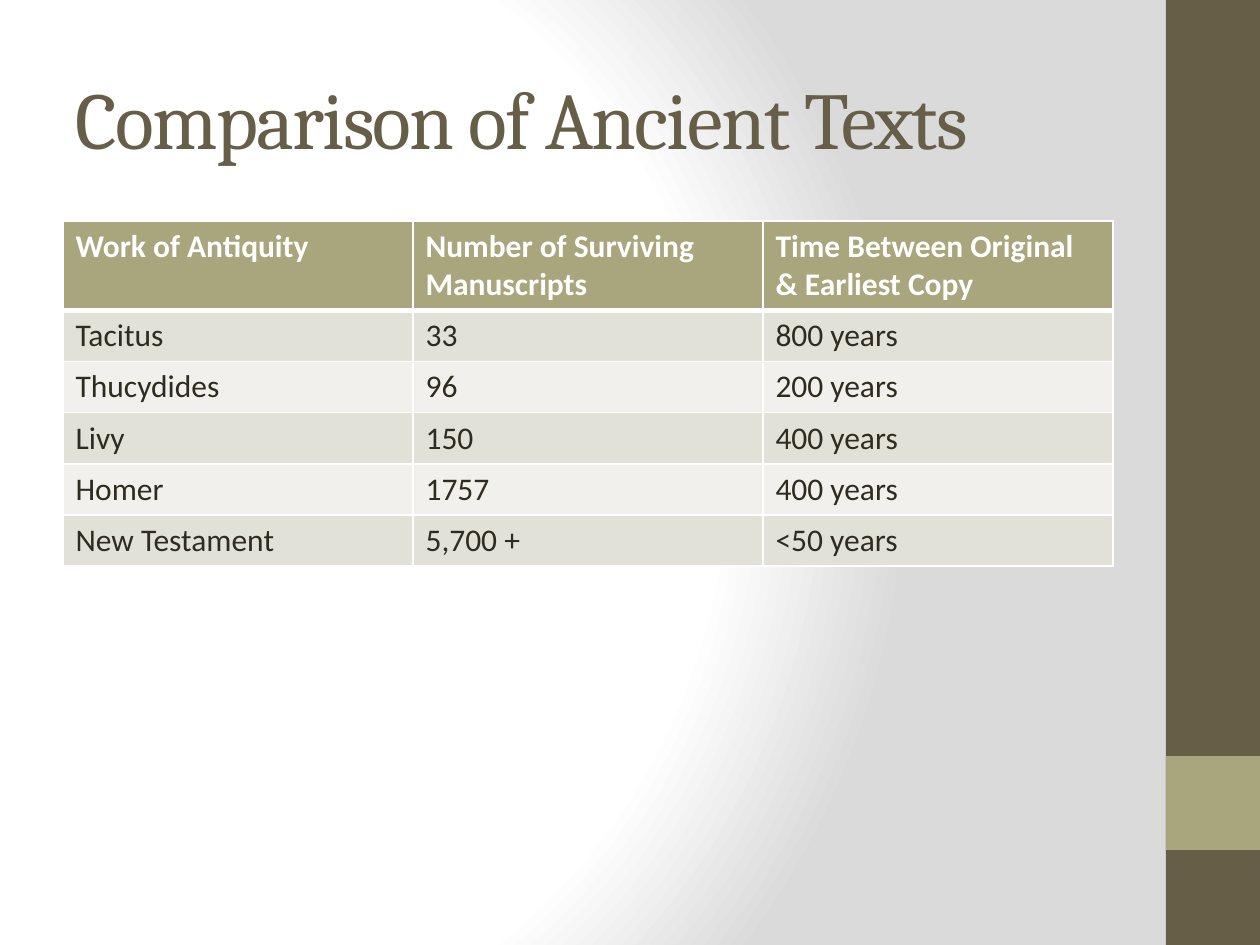
from dataclasses import dataclass

from lxml.etree import SubElement
from pptx import Presentation
from pptx.dml.color import RGBColor
from pptx.enum.shapes import MSO_SHAPE
from pptx.enum.text import MSO_ANCHOR, PP_ALIGN
from pptx.oxml import parse_xml
from pptx.oxml.ns import nsdecls, qn
from pptx.util import Emu, Pt


@dataclass(frozen=True)
class Theme:
    brown: str = "675E47"
    olive: str = "A9A57C"
    ink: str = "2F2B20"
    white: str = "FFFFFF"
    gray: str = "DADADA"
    bands: tuple = ("E2E1D7", "F1F0EC")
    heading_font: str = "Cambria"
    body_font: str = "Calibri"
    title_size: int = 46
    table_size: int = 18
    line: int = 1
    heavy_line: int = 3


THEME = Theme()
PX_PER_INCH = 126
ROWS = (
    ("Work of Antiquity", "Number of Surviving Manuscripts", "Time Between Original & Earliest Copy"),
    ("Tacitus", "33", "800 years"),
    ("Thucydides", "96", "200 years"),
    ("Livy", "150", "400 years"),
    ("Homer", "1757", "400 years"),
    ("New Testament", "5,700 +", "<50 years"),
)


def px(length):
    return Emu(round(length * 914400 / PX_PER_INCH))


def rgb(color):
    return RGBColor.from_string(color)


def style_span(span, font, size, color, bold=False):
    span.font.name = font
    span.font.size = Pt(size)
    span.font.bold = bold
    span.font.color.rgb = rgb(color)


def set_background(page):
    page.background.fill.gradient()
    old = next(page.element.iter(qn("a:gradFill")))
    stops = ((0, THEME.white), (75, THEME.white), (100, THEME.gray))
    stop_xml = "".join(
        f'<a:gs pos="{position * 1000}"><a:srgbClr val="{color}"/></a:gs>'
        for position, color in stops
    )
    old.getparent().replace(old, parse_xml(
        f'<a:gradFill {nsdecls("a")} rotWithShape="1"><a:gsLst>{stop_xml}</a:gsLst>'
        '<a:path path="circle"><a:fillToRect l="20000" t="50000" r="100000" b="50000"/>'
        '</a:path></a:gradFill>'
    ))


def add_block(page, left, top, width, height, color):
    block = page.shapes.add_shape(MSO_SHAPE.RECTANGLE, px(left), px(top), px(width), px(height))
    block.shadow.inherit = False
    block.fill.solid()
    block.fill.fore_color.rgb = rgb(color)
    block.line.fill.background()


def set_title(page, text, left, top, width, height):
    title = page.shapes.title
    title.left, title.top, title.width, title.height = map(px, (left, top, width, height))
    frame = title.text_frame
    frame.text = text
    frame.word_wrap = True
    frame.vertical_anchor = MSO_ANCHOR.MIDDLE
    para = frame.paragraphs[0]
    para.alignment = PP_ALIGN.LEFT
    span = para.runs[0]
    style_span(span, THEME.heading_font, THEME.title_size, THEME.brown)
    span.font._element.set("spc", "-100")


def set_borders(cell, **widths):
    properties = cell._tc.get_or_add_tcPr()
    for index, side in enumerate("LRTB"):
        width = widths.get(side, THEME.line)
        line = SubElement(properties, qn(f"a:ln{side}"), w=str(Pt(width)))
        fill = SubElement(line, qn("a:solidFill"))
        SubElement(fill, qn("a:srgbClr"), val=THEME.white)
        properties.insert(index, line)


def fill_cell(cell, text, row):
    header = row == 0
    cell.text = text
    style_span(cell.text_frame.paragraphs[0].runs[0], THEME.body_font, THEME.table_size,
               THEME.white if header else THEME.ink, header)
    cell.fill.solid()
    cell.fill.fore_color.rgb = rgb(THEME.olive if header else THEME.bands[(row - 1) % 2])
    heavy_sides = {0: "B", 1: "T"}.get(row, "")
    set_borders(cell, **{side: THEME.heavy_line for side in heavy_sides})


def add_comparison(page, left, top, column_width, header_height, row_height):
    columns = len(ROWS[0])
    height = header_height + row_height * (len(ROWS) - 1)
    table = page.shapes.add_table(len(ROWS), columns, px(left), px(top),
                                  px(column_width * columns), px(height)).table
    for column in table.columns:
        column.width = px(column_width)
    for row, texts in enumerate(ROWS):
        table.rows[row].height = px(row_height if row else header_height)
        for column, text in enumerate(texts):
            fill_cell(table.cell(row, column), text, row)


def main():
    deck = Presentation()
    deck.slide_width, deck.slide_height = px(1260), px(945)
    page = deck.slides.add_slide(deck.slide_layouts[5])
    set_background(page)
    add_block(page, 1166, 0, 94, 945, THEME.brown)
    add_block(page, 1166, 756, 94, 94, THEME.olive)
    set_title(page, "Comparison of Ancient Texts", 63, 38, 1050, 158)
    add_comparison(page, 63, 221, 350, 89, 51)
    deck.save("out.pptx")


if __name__ == "__main__":
    main()
